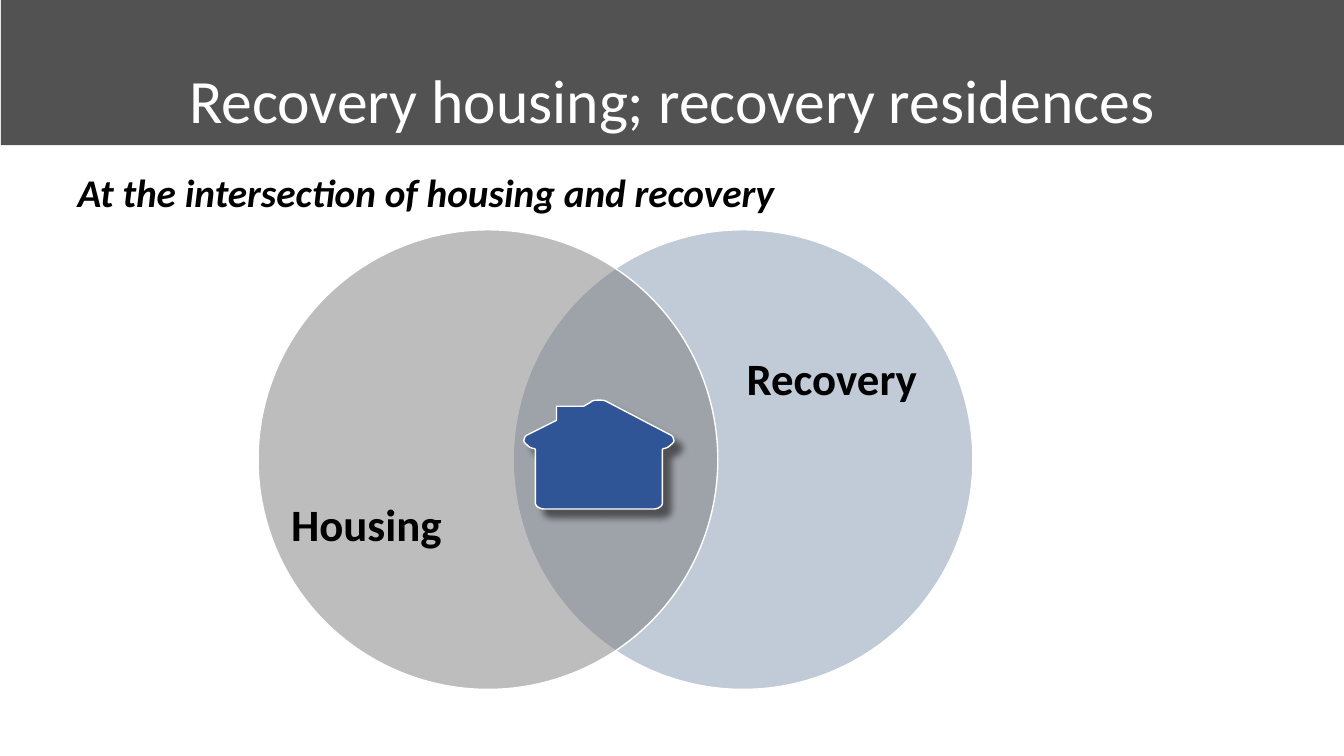
from lxml.etree import SubElement as Sub
from pptx import Presentation
from pptx.dml.color import RGBColor
from pptx.enum.shapes import MSO_SHAPE as Kind
from pptx.enum.text import MSO_ANCHOR as Anchor, MSO_AUTO_SIZE as Fit, PP_ALIGN as Align
from pptx.oxml.ns import qn
from pptx.util import Emu, Pt

PX = 9144


def px(*vals):
    return [Emu(round(v * PX)) for v in vals]


def hue(code):
    return RGBColor.from_string(code)


def paint(shape, fill, line=None, alpha=None):
    shape.shadow.inherit = False
    shape.fill.solid()
    shape.fill.fore_color.rgb = hue(fill)
    if alpha:
        tint = shape.fill._xPr.find(qn("a:solidFill"))[0]
        Sub(tint, qn("a:alpha"), val=str(alpha * 1000))
    if line:
        shape.line.color.rgb = hue(line)
        shape.line.width = Pt(1)
    else:
        shape.line.fill.background()


def place(shape, box):
    for name, val in zip(("left", "top", "width", "height"), px(*box)):
        setattr(shape, name, val)


def write(shape, text, size, color="000000", align=Align.CENTER, anchor=Anchor.MIDDLE, **style):
    frame = shape.text_frame
    frame.text = text
    for name, val in dict(word_wrap=True, auto_size=Fit.NONE, vertical_anchor=anchor).items():
        setattr(frame, name, val)
    para = frame.paragraphs[0]
    para.alignment, para.line_spacing = align, 0.9
    font = para.runs[0].font
    for name, val in dict(name="Calibri", size=Pt(size), **style).items():
        setattr(font, name, val)
    font.color.rgb = hue(color)
    return para


def header(slide, box):
    x, y, w, h = box
    bar = slide.shapes.add_shape(Kind.RECTANGLE, *px(*box))
    paint(bar, "525252")
    title = slide.shapes.title
    place(title, (x + 91, y + 36, w - 183, h - 5))
    write(title, "Recovery housing; recovery residences", 44, "FFFFFF", bold=False)
    title._element.addprevious(bar._element)


def lead(slide, box):
    body = slide.placeholders[1]
    place(body, box)
    para = write(body, "At the intersection of housing and recovery", 28,
                 align=Align.LEFT, anchor=Anchor.TOP, bold=True, italic=True)
    para.space_before = Pt(10)
    props = para._p.get_or_add_pPr()
    for name in ("marL", "indent"):
        props.set(name, "0")
    Sub(props, qn("a:buNone"))


def circle(slide, box, fill, text, label):
    x, y, w, h = box
    paint(slide.shapes.add_shape(Kind.OVAL, *px(*box)), fill, "FFFFFF", 50)
    dx, dy, tw, th = label
    note = slide.shapes.add_textbox(*px(x + dx, y + dy, tw, th))
    write(note, text, 32, bold=True)
    for side in ("left", "top", "right", "bottom"):
        setattr(note.text_frame, "margin_" + side, 0)


def venn(slide, box):
    x, y, w, h = box
    circle(slide, (x + w - h, y, h, h), "8497B0", "Recovery", (149, 47, 334, 205))
    circle(slide, (x, y, h, h), "7C7C7C", "Housing", (-29, 169, 273, 251))


def curve(*pts, steps=8):
    a, b, c, d = pts
    for i in range(1, steps + 1):
        t = i / steps
        u = 1 - t
        yield tuple(u**3 * p + 3 * u * u * t * q + 3 * u * t * t * r + t**3 * s
                    for p, q, r, s in zip(a, b, c, d))


def house(slide, box):
    x, y, w, h = box
    mid = x + w / 2
    wall = [(54, h), *curve((54, h), (59, h), (63, 105), (63, 102)), (63, 49), (64, 48),
            *curve((64, 48), (66, 48), (67, 47), (68, 47)),
            *curve((68, 47), (75, 42), (75, 40), (74, 39)),
            *curve((74, 39), (74, 37), (73, 36), (72, 35))]
    peak = [(7, 1), *curve((7, 1), (5, 0), (3, 0), (0, 0))]
    stack = [(42, 20), (42, 6), (15, 6), *curve((15, 6), (10, 3), (8, 2), (7, 1))]
    left = [(mid - a, y + b) for a, b in wall + stack + peak]
    right = [(mid + a, y + b) for a, b in reversed(wall + peak)]
    start, *rest = [px(*spot) for spot in left + right]
    path = slide.shapes.build_freeform(*start)
    path.add_line_segments(rest, close=True)
    home = path.convert_to_shape()
    paint(home, "2F5597", "FFFFFF")
    effect = home._element.spPr.find(qn("a:effectLst"))
    shade = Sub(effect, qn("a:outerShdw"), blurRad=str(Pt(5)), dist=str(Pt(8)),
                dir="2700000", algn="tl", rotWithShape="0")
    tint = Sub(shade, qn("a:srgbClr"), val="000000")
    Sub(tint, qn("a:alpha"), val="50000")


def main():
    deck = Presentation()
    deck.slide_width, deck.slide_height = px(1333, 750)
    slide = deck.slides.add_slide(deck.slide_layouts[1])
    header(slide, (1, -6, 1333, 150))
    lead(slide, (67, 167, 1200, 92))
    venn(slide, (256, 228, 709, 456))
    house(slide, (519, 397, 150, 108))
    deck.save("out.pptx")


if __name__ == "__main__":
    main()
